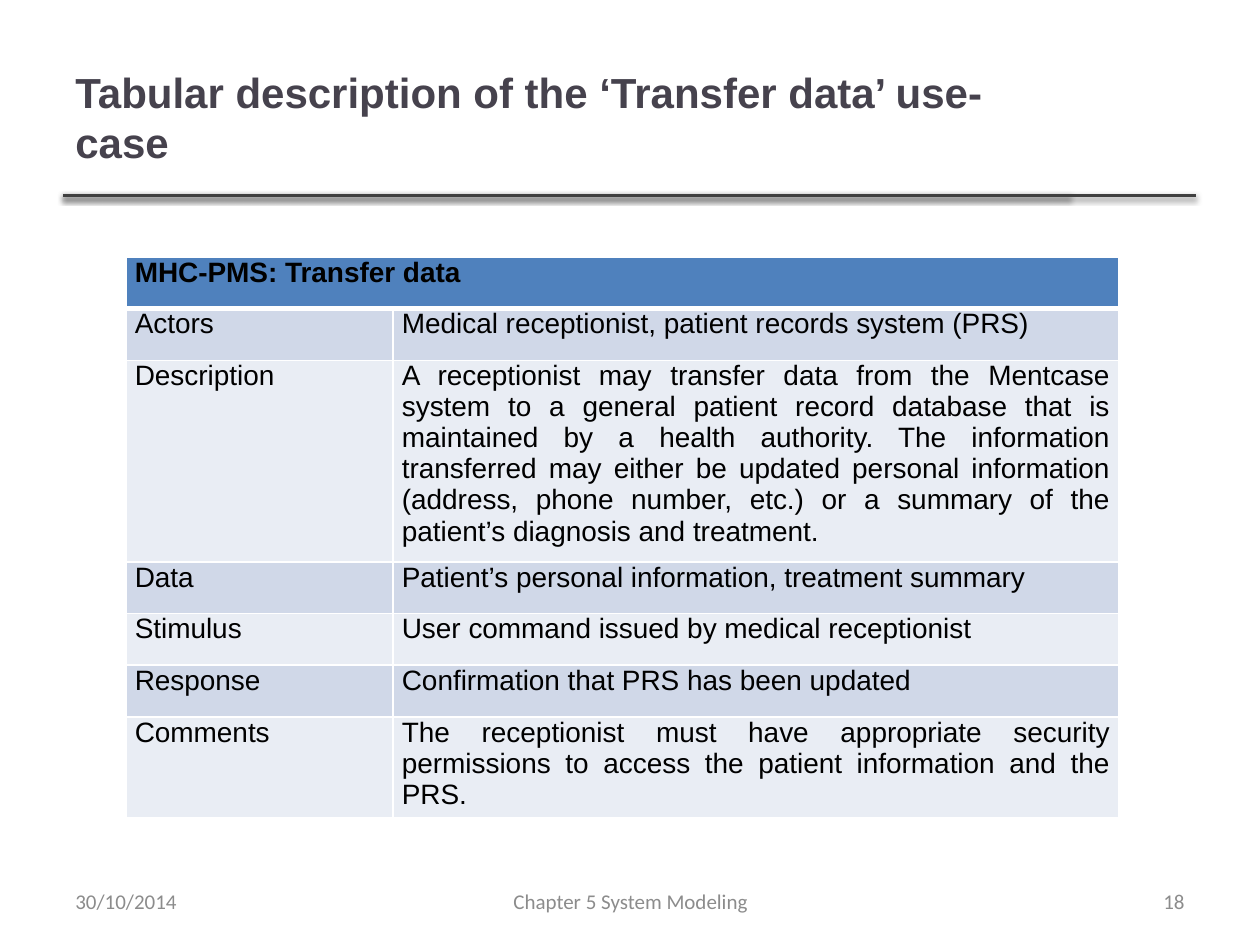
from typing import NamedTuple

from lxml.etree import SubElement
from pptx import Presentation
from pptx.dml.color import RGBColor
from pptx.enum.shapes import MSO_CONNECTOR
from pptx.enum.text import MSO_ANCHOR, PP_ALIGN
from pptx.oxml.ns import qn
from pptx.util import Inches, Pt


class TextStyle(NamedTuple):
    font: str
    size: int
    color: str
    bold: bool = False


class Label(NamedTuple):
    text: str
    left: float
    top: float
    width: float
    height: float
    style: TextStyle
    align: PP_ALIGN = PP_ALIGN.LEFT


class UseCaseRow(NamedTuple):
    field: str
    detail: str
    height: float = 0.41


TITLE = TextStyle("Arial", 24, "46424D", True)
FOOTER = TextStyle("Calibri", 12, "8C8C8C")
HEADING = TextStyle("Arial", 16, "000000", True)
BODY = TextStyle("Arial", 16, "000000")

LABELS = [
    Label("Tabular description of the ‘Transfer data’ use-case", 0.5, 0.3, 7.98, 1.25, TITLE),
    Label("30/10/2014", 0.5, 6.95, 2.33, 0.4, FOOTER),
    Label("Chapter 5 System Modeling", 3.42, 6.95, 3.17, 0.4, FOOTER, PP_ALIGN.CENTER),
    Label("18", 7.17, 6.95, 2.33, 0.4, FOOTER, PP_ALIGN.RIGHT),
]
ROWS = [
    UseCaseRow("MHC-PMS: Transfer data", ""),
    UseCaseRow("Actors", "Medical receptionist, patient records system (PRS)"),
    UseCaseRow(
        "Description",
        "A receptionist may transfer data from the Mentcase system to a general patient "
        "record database that is maintained by a health authority. The information "
        "transferred may either be updated personal information (address, phone number, "
        "etc.) or a summary of the patient’s diagnosis and treatment.",
        1.48,
    ),
    UseCaseRow("Data", "Patient’s personal information, treatment summary"),
    UseCaseRow("Stimulus", "User command issued by medical receptionist"),
    UseCaseRow("Response", "Confirmation that PRS has been updated"),
    UseCaseRow(
        "Comments",
        "The receptionist must have appropriate security permissions to access the "
        "patient information and the PRS.",
        0.74,
    ),
]
COLUMN_WIDTHS = [2.12, 5.76]
HEADER_FILL = "4F81BD"
BAND_FILLS = ["E9EDF4", "D0D8E8"]


def rgb(value: str) -> RGBColor:
    """Turn a hex string into a colour."""
    return RGBColor.from_string(value)


def write(frame, text: str, style: TextStyle, align: PP_ALIGN) -> None:
    """Write one styled run into the first paragraph of a frame."""
    para = frame.paragraphs[0]
    para.alignment = align
    span = para.add_run()
    span.text = text
    span.font.name = style.font
    span.font.size = Pt(style.size)
    span.font.bold = style.bold
    span.font.color.rgb = rgb(style.color)


def add_label(page, label: Label) -> None:
    """Add a wrapped, vertically centred text box."""
    box = page.shapes.add_textbox(
        Inches(label.left), Inches(label.top), Inches(label.width), Inches(label.height)
    )
    box.text_frame.word_wrap = True
    box.text_frame.vertical_anchor = MSO_ANCHOR.MIDDLE
    write(box.text_frame, label.text, label.style, label.align)


def add_rule(page, right: float) -> None:
    """Add a horizontal rule with a soft shadow beneath the title."""
    rule = page.shapes.add_connector(
        MSO_CONNECTOR.STRAIGHT, Inches(0.5), Inches(1.55), Inches(right), Inches(1.55)
    )
    rule.line.color.rgb = rgb("404040")
    rule.line.width = Pt(2)
    effects = SubElement(rule._element.spPr, qn("a:effectLst"))
    shadow = SubElement(
        effects, qn("a:outerShdw"), blurRad=str(Pt(3.1)), dist=str(Pt(1.6)),
        dir="5400000", rotWithShape="0",
    )
    tint = SubElement(shadow, qn("a:srgbClr"), val="000000")
    SubElement(tint, qn("a:alpha"), val="38000")


def add_border(cell, side: str, width: int) -> None:
    """Add a white border to one side of a cell."""
    properties = cell._tc.get_or_add_tcPr()
    border = SubElement(properties, qn(f"a:ln{side}"), w=str(Pt(width)))
    fill = SubElement(border, qn("a:solidFill"))
    SubElement(fill, qn("a:srgbClr"), val="FFFFFF")


def style_cell(cell, row_index: int) -> None:
    """Set the margins, borders and band fill of a cell."""
    cell.margin_left = cell.margin_right = Inches(0.07)
    cell.margin_top = cell.margin_bottom = Inches(0)
    widths = {"L": 1, "R": 1, "T": 3 if row_index == 1 else 1, "B": 3 if row_index == 0 else 1}
    for side, width in widths.items():
        add_border(cell, side, width)
    cell.fill.solid()
    cell.fill.fore_color.rgb = rgb(BAND_FILLS[row_index % 2] if row_index else HEADER_FILL)


def add_use_case_table(page, rows: list[UseCaseRow]) -> None:
    """Add the use-case table with a merged heading row."""
    table = page.shapes.add_table(
        len(rows), len(COLUMN_WIDTHS), Inches(1), Inches(2.04),
        Inches(sum(COLUMN_WIDTHS)), Inches(sum(row.height for row in rows)),
    ).table
    for column, width in zip(table.columns, COLUMN_WIDTHS):
        column.width = Inches(width)
    table.cell(0, 0).merge(table.cell(0, 1))
    for row_index, row in enumerate(rows):
        table.rows[row_index].height = Inches(row.height)
        for column_index, text in enumerate((row.field, row.detail)):
            cell = table.cell(row_index, column_index)
            style_cell(cell, row_index)
            if text:
                style = BODY if row_index else HEADING
                write(cell.text_frame, text, style, PP_ALIGN.JUSTIFY)


def main() -> None:
    """Build and save the slide."""
    deck = Presentation()
    deck.slide_width, deck.slide_height = Inches(10), Inches(7.5)
    page = deck.slides.add_slide(deck.slide_layouts[6])
    for right in (8.49, 9.49):
        add_rule(page, right)
    for label in LABELS:
        add_label(page, label)
    add_use_case_table(page, ROWS)
    deck.save("out.pptx")


if __name__ == "__main__":
    main()
